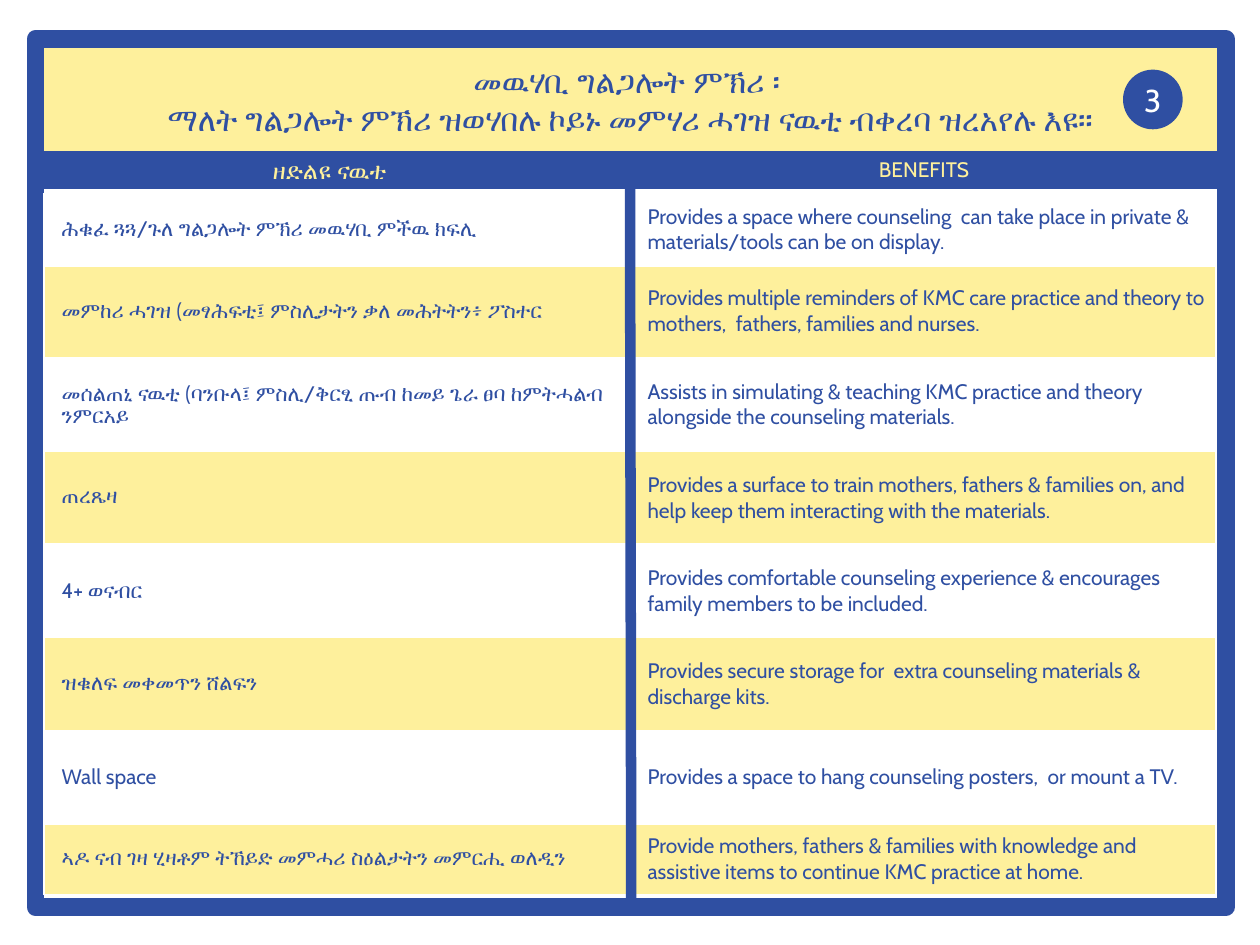
"""Build the counseling supplies slide with its table of items and benefits."""
from lxml import etree
from pptx import Presentation, util as u
from pptx.dml.color import RGBColor
from pptx.enum import shapes, text
from pptx.oxml import ns

PX = 9144
BLUE, GOLD, WHITE = "2F4FA2", "FEF09C", "FFFFFF"


def paint(fmt, tone):
    if hasattr(fmt, "solid"):
        fmt.solid()
        fmt.fore_color.rgb = RGBColor.from_string(tone)
    else:
        fmt.color.rgb = RGBColor.from_string(tone)


def write(para, words, size, tone, bold=None):
    run = para.add_run()
    run.text = words
    run.font.name = "Cabin"
    run.font.size = u.Pt(size)
    run.font.bold = bold
    paint(run.font, tone)


deck = Presentation()
deck.slide_width, deck.slide_height = 1000 * PX, 750 * PX
page = deck.slides.add_slide(deck.slide_layouts[6])
draw = page.shapes

kinds = shapes.MSO_SHAPE
forms = [
    (kinds.RECTANGLE, (28, 31, 945, 118), GOLD, None, 0),
    (kinds.RECTANGLE, (28, 31, 945, 689), None, BLUE, 10),
    (kinds.RECTANGLE, (28, 120, 945, 30), BLUE, None, 0),
]
badge = (kinds.OVAL, (892, 56, 46, 46), BLUE, BLUE, 1)

heads = [("ዘድልዩ ናዉቲ", 28, 34, 14), ("BENEFITS", 500, 30, 12)]

rows = [
    ("ሕቁፈ ጓጓ/ጉለ ግልጋሎት ምኽሪ መዉሃቢ ምችዉ ክፍሊ",
     "Provides a space where counseling  can take place in private & materials/tools can be on display."),
    ("መምከሪ ሓገዝ (መፃሕፍቲ፤ ምስሊታትን ቃለ መሕትትን፥ ፖስተር",
     "Provides multiple reminders of KMC care practice and theory to mothers,  fathers, families and nurses."),
    ("መሰልጠኒ ናዉቲ (ባንቡላ፤ ምስሊ/ቅርፂ ጡብ ከመይ ጌራ ፀባ ከምትሓልብ ንምርአይ",
     "Assists in simulating & teaching KMC practice and theory alongside the counseling materials."),
    ("ጠረጼዛ",
     "Provides a surface to train mothers, fathers & families on, and help keep them interacting with the materials."),
    ("4+ ወናብር",
     "Provides comfortable counseling experience & encourages family members to be included."),
    ("ዝቁለፍ መቀመጥን ሸልፍን",
     "Provides secure storage for  extra counseling materials & discharge kits."),
    ("Wall space",
     "Provides a space to hang counseling posters,  or mount a TV."),
    ("ኣዶ ናብ ገዛ ሂዛቶም ትኸይድ መምሓሪ ስዕልታትን መምርሒ ወለዲን",
     "Provide mothers, fathers & families with knowledge and assistive items to continue KMC practice at home."),
]

title = [
    [("መዉሃቢ ግልጋሎት ምኽሪ", True), (" ፡ ", False)],
    [("ማለት ግልጋሎት ምኽሪ ዝወሃበሉ ኮይኑ መምሃሪ ሓገዝ ናዉቲ ብቀረባ ዝረአየሉ እዩ፡፡", False)],
]

for kind, box, fill, edge, width in forms + [badge]:
    form = draw.add_shape(kind, *[n * PX for n in box])
    form.shadow.inherit = False
    if fill:
        paint(form.fill, fill)
    else:
        form.fill.background()
    if edge:
        paint(form.line, edge)
        form.line.width = u.Pt(width)
    else:
        form.line.fill.background()

frame = form.text_frame
frame.word_wrap = False
frame.vertical_anchor = text.MSO_ANCHOR.MIDDLE
frame.paragraphs[0].alignment = text.PP_ALIGN.CENTER
write(frame.paragraphs[0], "3", 18, WHITE)

for words, left, high, size in heads:
    frame = draw.add_textbox(left * PX, 119 * PX, 467 * PX, high * PX).text_frame
    frame.word_wrap = True
    frame.paragraphs[0].alignment = text.PP_ALIGN.CENTER
    write(frame.paragraphs[0], words, size, GOLD)

grid = draw.add_table(len(rows), 2, 35 * PX, 154 * PX, 930 * PX, 556 * PX).table
grid.first_row = grid.horz_banding = False
for r, pair in enumerate(rows):
    grid.rows[r].height = (56 if r in (0, len(rows) - 1) else 74) * PX
    for c, words in enumerate(pair):
        cell = grid.cell(r, c)
        cell.vertical_anchor = text.MSO_ANCHOR.MIDDLE
        cell.margin_left, cell.margin_right = 14 * PX, 7 * PX
        cell.margin_top = cell.margin_bottom = 4 * PX
        props = cell._tc.get_or_add_tcPr()
        for side in "LRTB":
            wide = 3 if r == 0 and side == "B" else 1
            edge = etree.SubElement(props, ns.qn("a:ln" + side), w=str(u.Pt(wide)))
            fill = etree.SubElement(edge, ns.qn("a:solidFill"))
            etree.SubElement(fill, ns.qn("a:srgbClr"), val=WHITE)
        paint(cell.fill, GOLD if r % 2 else WHITE)
        write(cell.text_frame.paragraphs[0], words, 12, BLUE)

for ends in [(500, 146, 501, 715), (28, 146, 966, 146)]:
    rule = draw.add_connector(shapes.MSO_CONNECTOR.STRAIGHT, *[n * PX for n in ends])
    paint(rule.line, BLUE)
    rule.line.width = u.Pt(6)
    etree.SubElement(rule._element.spPr, ns.qn("a:effectLst"))

frame = draw.add_textbox(28 * PX, 44 * PX, 945 * PX, 71 * PX).text_frame
frame.word_wrap = True
frame.vertical_anchor = text.MSO_ANCHOR.MIDDLE
for i, runs in enumerate(title):
    para = frame.add_paragraph() if i else frame.paragraphs[0]
    para.alignment = text.PP_ALIGN.CENTER
    for words, bold in runs:
        write(para, words, 18, BLUE, bold)

deck.save("out.pptx")
